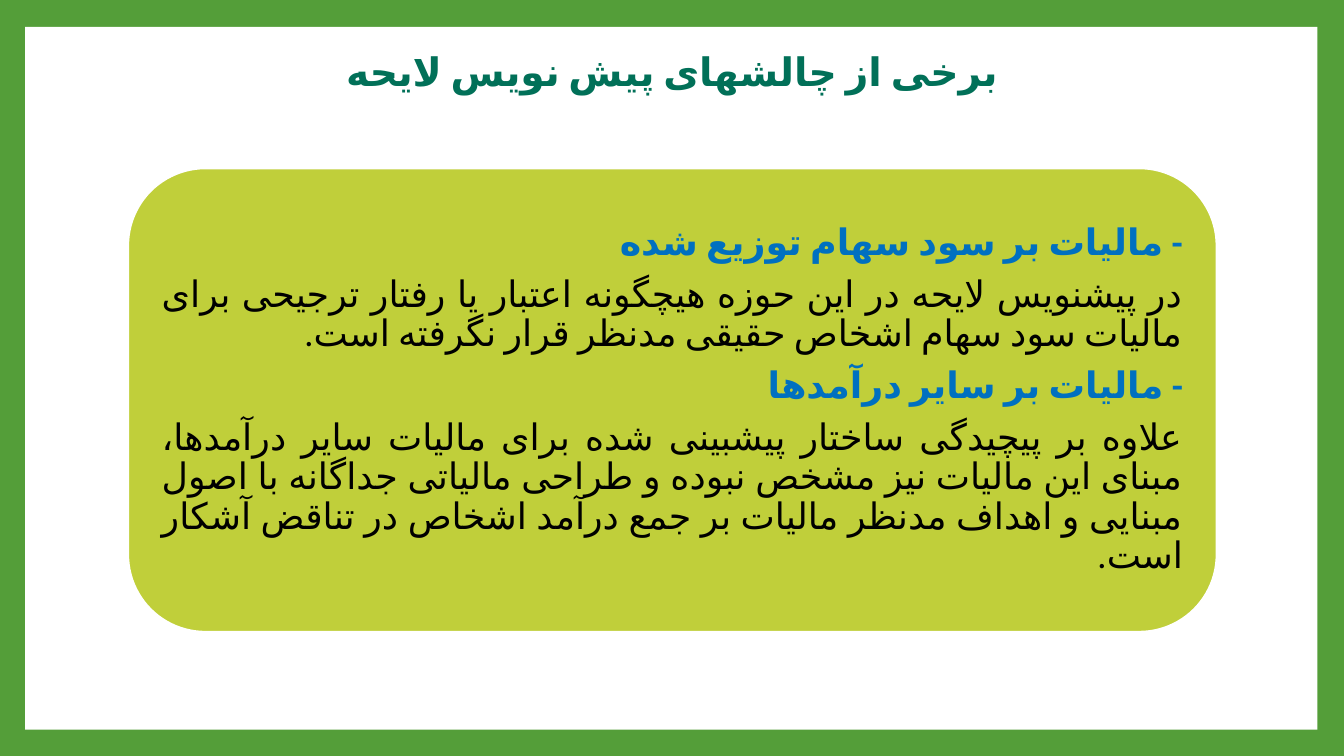
import pptx
import pptx.dml.color
import pptx.enum.lang
import pptx.enum.shapes
import pptx.enum.text
import pptx.util
import lxml.etree

Pt = pptx.util.Pt
ALIGN = pptx.enum.text.PP_ALIGN
SHAPE = pptx.enum.shapes.MSO_SHAPE
NS = "{http://schemas.openxmlformats.org/drawingml/2006/main}"

TITLE = "برخی از چالشهای پیش نویس لایحه"
CHALLENGES = [
    ("- مالیات بر سود سهام توزیع شده",
     "در پیشنویس لایحه در این حوزه هیچگونه اعتبار یا رفتار ترجیحی برای مالیات "
     "سود سهام اشخاص حقیقی مدنظر قرار نگرفته است."),
    ("- مالیات بر سایر درآمدها",
     "علاوه بر پیچیدگی ساختار پیشبینی شده برای مالیات سایر درآمدها، مبنای این "
     "مالیات نیز مشخص نبوده و طراحی مالیاتی جداگانه با اصول مبنایی و اهداف مدنظر "
     "مالیات بر جمع درآمد اشخاص در تناقض آشکار است."),
]


def rgb(color):
    """Turn a hex string into a colour."""
    return pptx.dml.color.RGBColor.from_string(color)


def place(sp, x, y, w, h):
    """Move and size a shape, in points."""
    sp.left, sp.top, sp.width, sp.height = Pt(x), Pt(y), Pt(w), Pt(h)


def add_box(s, kind, x, y, w, h, fill, line=None):
    """Add a filled shape with an optional outline."""
    sp = s.shapes.add_shape(kind, Pt(x), Pt(y), Pt(w), Pt(h))
    sp.shadow.inherit = False
    sp.fill.solid()
    sp.fill.fore_color.rgb = rgb(fill)
    if line:
        sp.line.color.rgb = rgb(line)
        sp.line.width = Pt(1.5)
    else:
        sp.line.fill.background()
    return sp


def setup_frame(tf, inset):
    """Centre a text frame vertically with equal insets."""
    tf.word_wrap = True
    tf.auto_size = pptx.enum.text.MSO_AUTO_SIZE.NONE
    tf.vertical_anchor = pptx.enum.text.MSO_ANCHOR.MIDDLE
    tf.margin_left = tf.margin_right = Pt(inset)
    tf.margin_top = tf.margin_bottom = Pt(inset)


def write(p, text, align, font, size, color, bold):
    """Fill a right-to-left Persian paragraph and format its run."""
    p.text = text
    p.alignment = align
    p.space_before = Pt(0)
    pPr = p._p.get_or_add_pPr()
    pPr.set("rtl", "1")
    pPr.set("marL", "0")
    pPr.set("indent", "0")
    r = p.runs[0]
    r.font.name = font
    r.font.size = Pt(size)
    r.font.bold = bold
    r.font.color.rgb = rgb(color)
    r.font._element.set("lang", "fa-IR")
    lxml.etree.SubElement(r.font._element, NS + "cs").set("typeface", font)


def add_title(s, x, y, w, h):
    """Place the slide title in its box."""
    sp = s.shapes.title
    place(sp, x, y, w, h)
    setup_frame(sp.text_frame, 4)
    write(sp.text_frame.paragraphs[0], TITLE, ALIGN.CENTER,
          "Arial Narrow", 28, "017058", True)


def add_challenges(s, x, y, w, h):
    """Place the rounded panel and its headed paragraphs."""
    panel = add_box(s, SHAPE.ROUNDED_RECTANGLE, x, y, w, h, "C0CF3A", "FFFFFF")
    body = s.placeholders[1]
    panel._element.addnext(body._element)
    place(body, x + 16, y + 16, w - 32, h - 32)
    tf = body.text_frame
    setup_frame(tf, 8)
    lines = [(text, i == 0) for pair in CHALLENGES for i, text in enumerate(pair)]
    for i, (text, heading) in enumerate(lines):
        p = tf.add_paragraph() if i else tf.paragraphs[0]
        write(p, text, ALIGN.JUSTIFY, "Calibri", 26,
              "0070C0" if heading else "000000", heading)
        p.line_spacing = 0.9
        p.space_after = Pt(9.1)
        lxml.etree.SubElement(p._p.get_or_add_pPr(), NS + "buNone")


def build_slide(prs):
    """Build the framed slide with its title and panel."""
    s = prs.slides.add_slide(prs.slide_layouts[1])
    s.background.fill.solid()
    s.background.fill.fore_color.rgb = rgb("549E39")
    page = add_box(s, SHAPE.RECTANGLE, 18, 19.2, 923, 502, "FFFFFF")
    s.shapes.title._element.addprevious(page._element)
    add_title(s, 156, 29.5, 648, 42)
    add_challenges(s, 91.5, 120.2, 777.6, 331.2)


def main():
    """Create and save the presentation."""
    prs = pptx.Presentation()
    prs.slide_width, prs.slide_height = Pt(960), Pt(540)
    build_slide(prs)
    prs.save("out.pptx")


if __name__ == "__main__":
    main()
